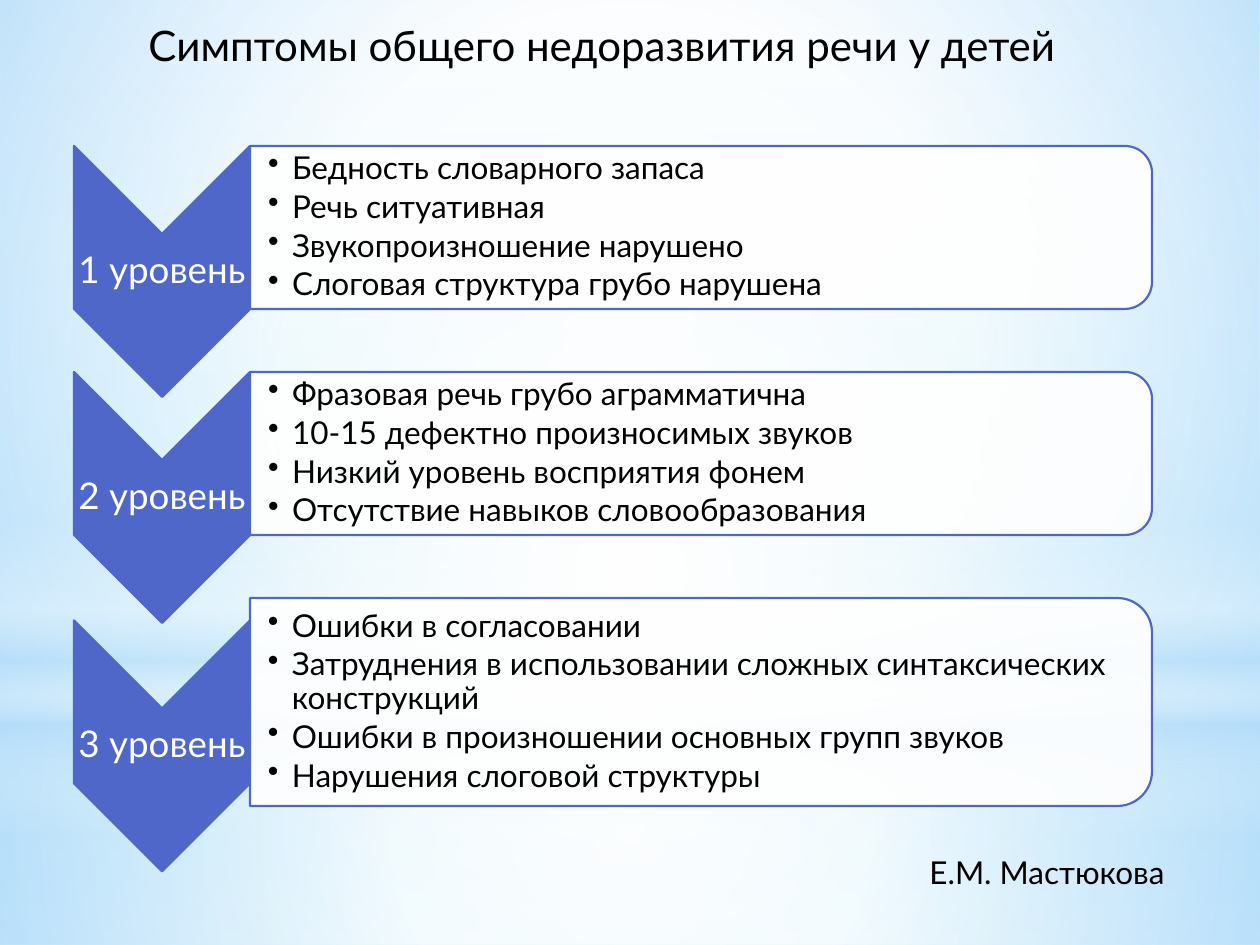
from lxml.etree import SubElement
from pptx import Presentation
from pptx.dml.color import RGBColor
from pptx.enum.shapes import MSO_SHAPE as Shape
from pptx.enum.text import MSO_ANCHOR as Anchor, MSO_AUTO_SIZE as AutoSize, PP_ALIGN as Align
from pptx.oxml.ns import qn
from pptx.util import Pt

PX = 914400 / 126
FONT = "Lato"
BLACK = RGBColor(0x00, 0x00, 0x00)
WHITE = RGBColor(0xFF, 0xFF, 0xFF)
INDIGO = RGBColor(0x4E, 0x67, 0xC8)
SKY = RGBColor(0xB4, 0xDC, 0xFA)
PALE = RGBColor(0xF7, 0xFC, 0xFE)
AQUA = RGBColor(0xB7, 0xE8, 0xFA)
MIST = RGBColor(0xCF, 0xF0, 0xFB)

TITLE = " Симптомы общего недоразвития речи у детей"
AUTHOR = "Е.М. Мастюкова"
LEVELS = [
    ("1 уровень", 163, [
        "Бедность словарного запаса",
        "Речь ситуативная",
        "Звукопроизношение нарушено",
        "Слоговая структура грубо нарушена",
    ]),
    ("2 уровень", 163, [
        "Фразовая речь грубо аграмматична",
        "10-15 дефектно произносимых звуков",
        "Низкий уровень восприятия фонем",
        "Отсутствие навыков словообразования",
    ]),
    ("3 уровень", 208, [
        "Ошибки в согласовании",
        "Затруднения в использовании сложных синтаксических конструкций",
        "Ошибки в произношении основных групп звуков",
        "Нарушения слоговой структуры",
    ]),
]
BACKDROP = [(0, PALE, 100), (74, AQUA, 100), (83, AQUA, 100), (100, MIST, 100)]
GLOWS = [
    (Shape.RECTANGLE, (0, 703, 1260, 242), None,
     [(0, WHITE, 91), (37, WHITE, 76), (100, SKY, 79)]),
    (Shape.RECTANGLE, (0, 0, 1260, 703), None,
     [(0, WHITE, 89), (48, WHITE, 62), (100, SKY, 79)]),
    (Shape.RECTANGLE, (0, 519, 1260, 315), 90,
     [(0, WHITE, 0), (29, WHITE, 30), (45, SKY, 40),
      (55, WHITE, 26), (65, SKY, 60), (100, WHITE, 0)]),
    (Shape.OVAL, (0, 221, 1260, 703), None, [(0, WHITE, 100), (56, WHITE, 0)]),
]

LEFT, TOP, GAP = 74, 146, 63
CHEVRON_W, CHEVRON_H, CHEVRON_BODY = 176, 251, 163
LABEL_H = 76
PANEL_W = 902


def emu(*lengths):
    return [round(length * PX) for length in lengths]


def set_alpha(color, percent):
    SubElement(color, qn("a:alpha")).set("val", str(percent * 1000))


def paint_gradient(owner, fill, stops, angle):
    fill.solid()
    solid = owner.find(qn("a:solidFill"))
    grad = solid.makeelement(qn("a:gradFill"), {"rotWithShape": "1"})
    stop_list = SubElement(grad, qn("a:gsLst"))
    for position, color, alpha in stops:
        stop = SubElement(stop_list, qn("a:gs"), pos=str(position * 1000))
        set_alpha(SubElement(stop, qn("a:srgbClr"), val=str(color)), alpha)
    if angle is None:
        circle = SubElement(grad, qn("a:path"), path="circle")
        SubElement(circle, qn("a:fillToRect"), l="50000", t="50000", r="50000", b="50000")
    else:
        SubElement(grad, qn("a:lin"), ang=str(angle * 60000), scaled="0")
    owner.replace(solid, grad)


def add_glow(shapes, kind, box, angle, stops):
    glow = shapes.add_shape(kind, *emu(*box))
    glow.shadow.inherit = False
    glow.line.fill.background()
    paint_gradient(glow.element.spPr, glow.fill, stops, angle)


def add_turned(shapes, kind, left, top, width, height, color, alpha=100):
    x, y = left + (width - height) / 2, top + (height - width) / 2
    turned = shapes.add_shape(kind, *emu(x, y, height, width))
    turned.rotation = 90
    turned.shadow.inherit = False
    turned.fill.solid()
    turned.fill.fore_color.rgb = color
    if alpha < 100:
        set_alpha(turned.element.spPr.find(qn("a:solidFill"))[0], alpha)
    turned.line.color.rgb = INDIGO
    turned.line.width = Pt(1.25)


def add_text(shapes, box, lines, size, color=BLACK, align=Align.LEFT, anchor=Anchor.TOP,
             insets=None, wrap=True, grow=False, spacing=None, after=None, bullet=False):
    text_box = shapes.add_textbox(*emu(*box))
    frame = text_box.text_frame
    frame.word_wrap = wrap
    frame.vertical_anchor = anchor
    frame.auto_size = AutoSize.SHAPE_TO_FIT_TEXT if grow else AutoSize.NONE
    if insets:
        (frame.margin_left, frame.margin_top,
         frame.margin_right, frame.margin_bottom) = emu(*insets)
    for number, line in enumerate(lines):
        paragraph = frame.add_paragraph() if number else frame.paragraphs[0]
        paragraph.alignment = align
        if spacing:
            paragraph.line_spacing = spacing
        props = paragraph._p.get_or_add_pPr()
        if after is not None:
            space = SubElement(props, qn("a:spcAft"))
            SubElement(space, qn("a:spcPct"), val=str(after * 1000))
        if bullet:
            paragraph.level = 1
            indent = emu(24)[0]
            props.set("marL", str(indent))
            props.set("indent", str(-indent))
            SubElement(props, qn("a:buChar"), char="•")
        run = paragraph.add_run()
        run.text = line
        run.font.name = FONT
        run.font.size = Pt(size)
        run.font.color.rgb = color


def add_level(shapes, top, height, label, symptoms):
    middle = top + height / 2
    panel_left = LEFT + CHEVRON_W
    inset = height / 20
    add_turned(shapes, Shape.CHEVRON, LEFT, middle - CHEVRON_BODY / 2,
               CHEVRON_W, CHEVRON_H, INDIGO)
    label_top = middle - CHEVRON_BODY / 2 + (CHEVRON_H - LABEL_H) / 2
    add_text(shapes, (LEFT, label_top, CHEVRON_W, LABEL_H), [label], 21, color=WHITE,
             align=Align.CENTER, anchor=Anchor.MIDDLE, insets=(1, 1, 1, 1),
             spacing=0.9, after=35)
    add_turned(shapes, Shape.ROUND_2_SAME_RECTANGLE, panel_left, top,
               PANEL_W, height, WHITE, alpha=90)
    add_text(shapes, (panel_left, top + inset, PANEL_W - inset, height - 2 * inset),
             symptoms, 18, anchor=Anchor.MIDDLE, insets=(18, 1, 1, 1),
             spacing=0.9, after=15, bullet=True)


def main():
    deck = Presentation()
    deck.slide_width, deck.slide_height = emu(1260, 945)
    slide = deck.slides.add_slide(deck.slide_layouts[6])
    backdrop = slide.background.fill
    backdrop.solid()
    paint_gradient(slide.element.find(".//" + qn("p:bgPr")), backdrop, BACKDROP, 90)
    for glow in GLOWS:
        add_glow(slide.shapes, *glow)

    add_text(slide.shapes, (115, 13, 963, 63), [TITLE], 24, align=Align.CENTER, grow=True)
    levels = slide.shapes.add_group_shape().shapes
    top = TOP
    for label, height, symptoms in LEVELS:
        add_level(levels, top, height, label, symptoms)
        top += height + GAP
    add_text(slide.shapes, (917, 847, 268, 50), [AUTHOR], 18, wrap=False, grow=True)
    deck.save("out.pptx")


if __name__ == "__main__":
    main()
